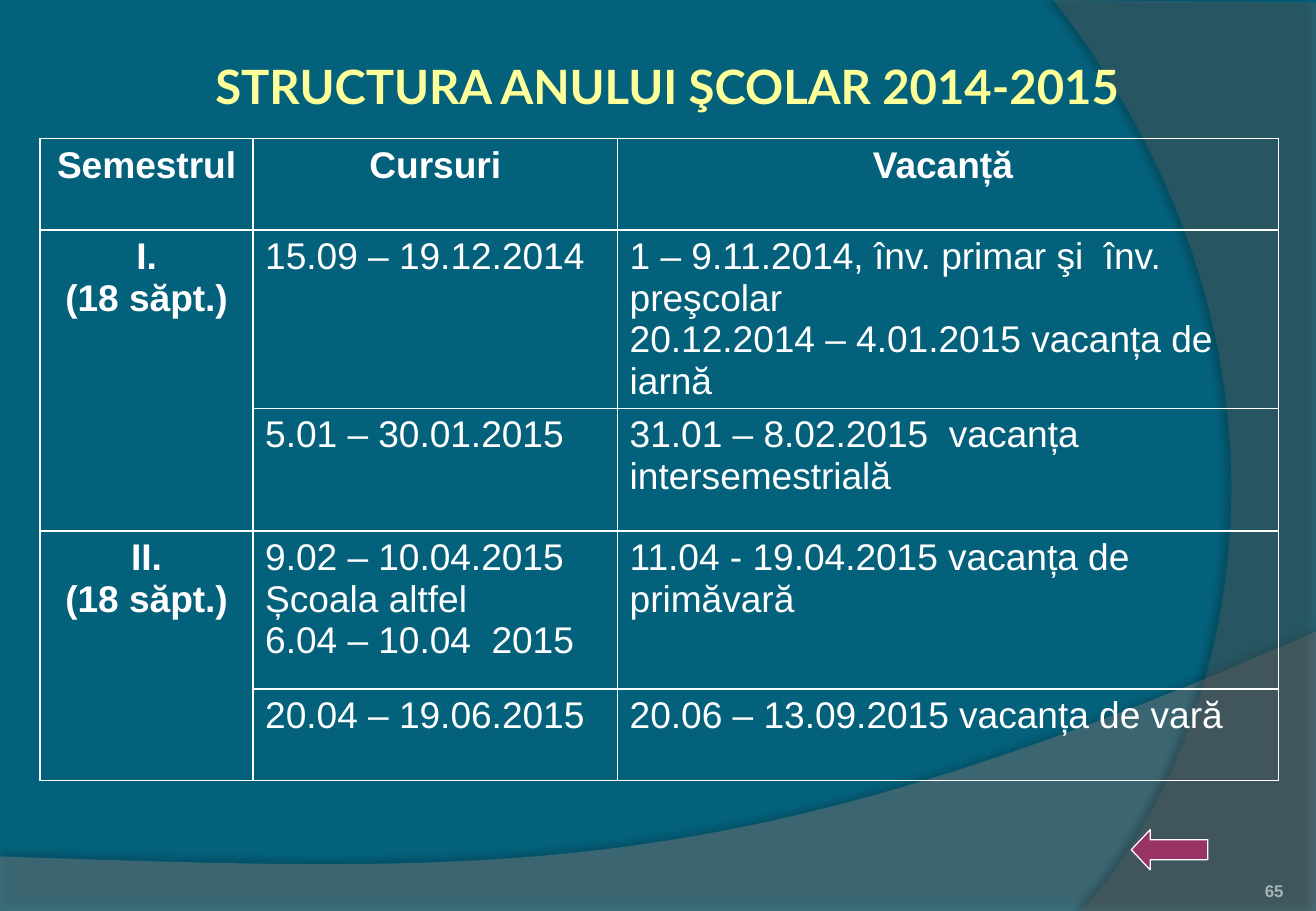
"""Build the slide with the structure of the 2014-2015 school year."""
from lxml.etree import SubElement
from pptx import Presentation
from pptx.dml.color import RGBColor
from pptx.enum.shapes import MSO_SHAPE as Shape
from pptx.enum.text import MSO_ANCHOR as Anchor, PP_ALIGN as Align
from pptx.oxml import parse_xml
from pptx.oxml.ns import nsdecls, qn
from pptx.util import Cm, Pt

COLORS = {
    "background": "04617B", "wave": "7F7F7F", "arc": "5E5E5E", "shadow": "000000",
    "title": "FFFF99", "text": "FFFFFF", "number": "A2B5B8", "arrow": "993366",
}
WIDTH, HEIGHT = 27.51, 19.05
UNITS = 100


def color(name):
    """Return the named colour."""
    return RGBColor.from_string(COLORS[name])


def style(paragraph, font_name, size, color_name, bold, align):
    """Format a whole paragraph."""
    paragraph.alignment = align
    font = paragraph.font
    font.name, font.size, font.bold = font_name, Pt(size), bold
    font.color.rgb = color(color_name)


deck = Presentation()
deck.slide_width, deck.slide_height = Cm(WIDTH), Cm(HEIGHT)
slide = deck.slides.add_slide(deck.slide_layouts[5])
slide.background.fill.solid()
slide.background.fill.fore_color.rgb = color("background")

swooshes = [
    ("wave", 45, [(0, 17.91), (0, HEIGHT), (WIDTH, HEIGHT), (WIDTH, 13.21)],
     [(15.39, 18.52), (10.74, 18.26), (0, 17.91)], 35, 3.5, 270),
    ("arc", 40, [(WIDTH, 0.05), (WIDTH, HEIGHT), (22.61, HEIGHT)],
     [(25.7, 15.72), (27.99, 7.62), (22.02, 0)], 45, 4, 180),
]
for name, opacity, corners, controls, shade, distance, angle in swooshes:
    points = [(round(x * UNITS), round(y * UNITS)) for x, y in corners + controls]
    left = min(x for x, y in points)
    top = min(y for x, y in points)
    outline = slide.shapes.build_freeform(*points[0], scale=Cm(1) / UNITS)
    outline.add_line_segments(points[1:len(corners)] + points[-1:], close=True)
    swoosh = outline.convert_to_shape()
    last_edge = list(swoosh._element.iter(qn("a:lnTo")))[-1]
    curve = parse_xml(f'<a:cubicBezTo {nsdecls("a")}/>')
    for x, y in points[-3:]:
        SubElement(curve, qn("a:pt"), x=str(x - left), y=str(y - top))
    last_edge.getparent().replace(last_edge, curve)

    swoosh.line.fill.background()
    swoosh.fill.solid()
    swoosh.fill.fore_color.rgb = color(name)
    properties = swoosh._element.spPr
    SubElement(properties.find(qn("a:solidFill"))[0], qn("a:alpha"), val=str(opacity * 1000))
    swoosh.shadow.inherit = False
    properties.find(qn("a:effectLst")).append(parse_xml(
        f'<a:outerShdw {nsdecls("a")} blurRad="{Pt(4)}" dist="{Pt(distance)}" '
        f'dir="{angle * 60000}" algn="ctr" rotWithShape="0">'
        f'<a:srgbClr val="{COLORS["shadow"]}"><a:alpha val="{shade * 1000}"/></a:srgbClr>'
        '</a:outerShdw>'))

page_number = slide.shapes.add_textbox(Cm(24.54), Cm(17.83), Cm(2.29), Cm(1.02)).text_frame
page_number.margin_left = page_number.margin_right = 0
page_number.margin_top = page_number.margin_bottom = 0
page_number.word_wrap = True
page_number.vertical_anchor = Anchor.BOTTOM
page_number.text = "65"
style(page_number.paragraphs[0], "Arial", 10, "number", True, Align.RIGHT)

title = slide.shapes.title
slide.shapes._spTree.append(title._element)
title.left, title.top, title.width, title.height = Cm(3.43), Cm(0.74), Cm(21.03), Cm(2.11)
title.text_frame.text = "STRUCTURA ANULUI ŞCOLAR 2014-2015"
title.text_frame.vertical_anchor = Anchor.MIDDLE
style(title.text_frame.paragraphs[0], "Lato", 28, "title", True, Align.CENTER)

calendar = [
    ["Semestrul", "Cursuri", "Vacanță "],
    ["I.\n(18 săpt.)", "15.09 – 19.12.2014",
     "1 – 9.11.2014, înv. primar şi  înv. preşcolar\n20.12.2014 – 4.01.2015 vacanța de iarnă"],
    ["", "5.01 – 30.01.2015", "31.01 – 8.02.2015  vacanța intersemestrială"],
    ["II.\n(18 săpt.)", "9.02 – 10.04.2015\nȘcoala altfel\n6.04 – 10.04  2015",
     "11.04 - 19.04.2015 vacanța de primăvară"],
    ["", "20.04 – 19.06.2015", "20.06 – 13.09.2015 vacanța de vară"],
]
column_widths = [4.45, 7.62, 13.82]
row_heights = [1.91, 2.67, 2.57, 3.3, 1.91]
table = slide.shapes.add_table(
    len(row_heights), len(column_widths), Cm(0.84), Cm(2.9),
    Cm(sum(column_widths)), Cm(sum(row_heights))).table
table.first_row = table.horz_banding = False
for column, width in zip(table.columns, column_widths):
    column.width = Cm(width)
for row, height in zip(table.rows, row_heights):
    row.height = Cm(height)
for first in (1, 3):
    table.cell(first, 0).merge(table.cell(first + 1, 0))

for r, entries in enumerate(calendar):
    for c, entry in enumerate(entries):
        cell = table.cell(r, c)
        heading = r == 0 or c == 0
        cell.text = entry
        for paragraph in cell.text_frame.paragraphs:
            style(paragraph, "Arial", 22, "text", heading, Align.CENTER if heading else Align.LEFT)
        borders = cell._tc.get_or_add_tcPr()
        for side in "LRTB":
            borders.append(parse_xml(
                f'<a:ln{side} {nsdecls("a")} w="{Pt(1)}"><a:solidFill>'
                f'<a:srgbClr val="{COLORS["text"]}"/></a:solidFill></a:ln{side}>'))
        cell.fill.background()

back_arrow = slide.shapes.add_shape(Shape.LEFT_ARROW, Cm(23.65), Cm(17.35), Cm(1.6), Cm(0.84))
back_arrow.adjustments[0], back_arrow.adjustments[1] = 0.5, 0.47
back_arrow.shadow.inherit = False
back_arrow.fill.solid()
back_arrow.fill.fore_color.rgb = color("arrow")
back_arrow.line.color.rgb = color("text")
back_arrow.line.width = Pt(0.75)

deck.save("out.pptx")
